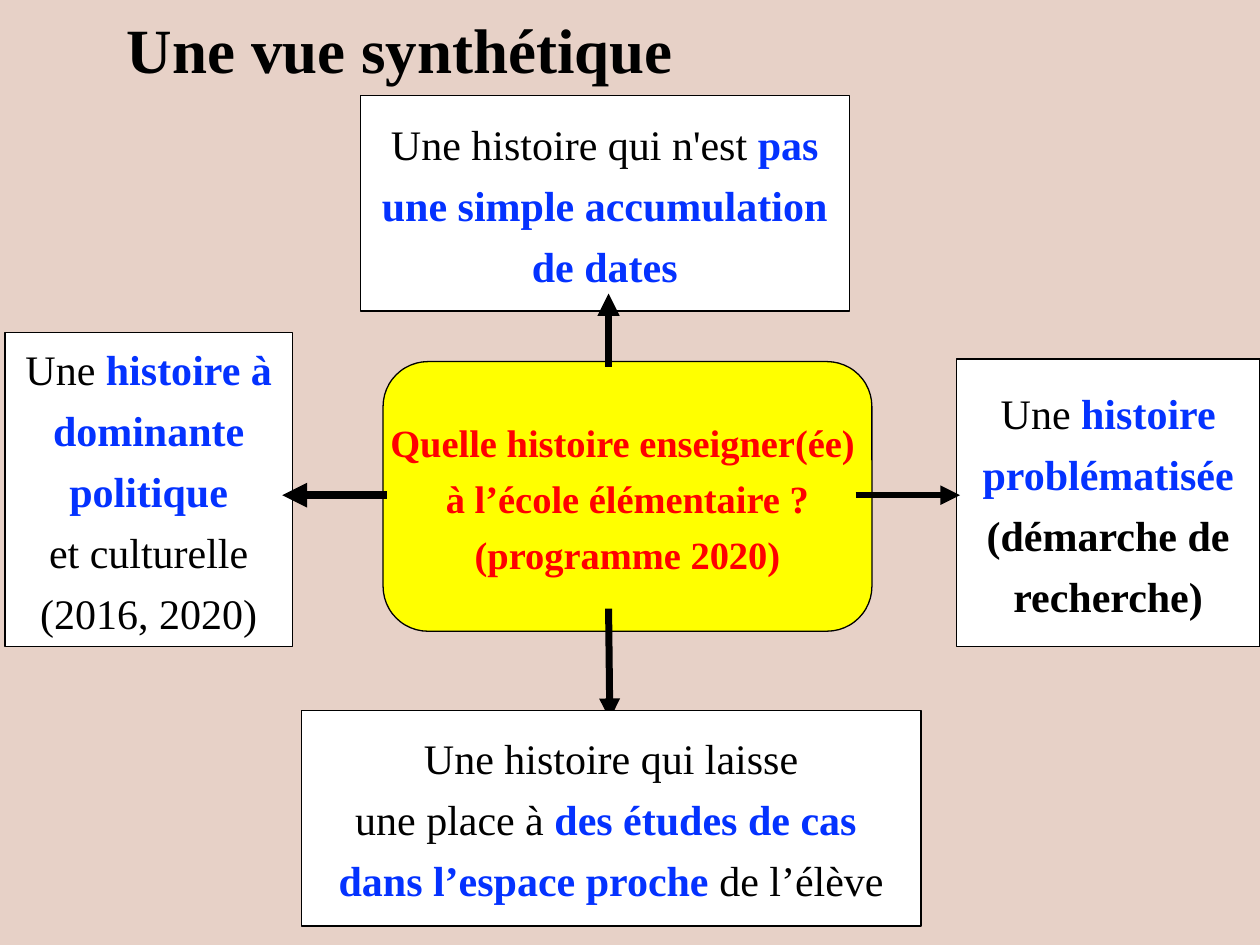
from dataclasses import dataclass

from lxml import etree
from pptx import Presentation
from pptx.dml.color import RGBColor
from pptx.enum.shapes import MSO_CONNECTOR, MSO_SHAPE
from pptx.enum.text import MSO_ANCHOR, PP_ALIGN
from pptx.oxml.ns import qn
from pptx.util import Inches, Pt

STRAIGHT = MSO_CONNECTOR.STRAIGHT
RECTANGLE = MSO_SHAPE.RECTANGLE
ROUNDED = MSO_SHAPE.ROUNDED_RECTANGLE
TOP, MIDDLE = MSO_ANCHOR.TOP, MSO_ANCHOR.MIDDLE
LEFT, CENTER = PP_ALIGN.LEFT, PP_ALIGN.CENTER


@dataclass(frozen=True)
class Theme:
    font: str = "Times New Roman"
    background: str = "E7D1C7"
    ink: str = "000000"
    paper: str = "FFFFFF"
    accent: str = "0432FF"
    question_fill: str = "FFFF00"
    question_ink: str = "FF0000"
    title_size: int = 36
    answer_size: int = 24
    question_size: int = 22
    outline: float = 0.75
    paragraph_gap: float = 0.25


THEME = Theme()


def rgb(value):
    return RGBColor.from_string(value)


def plain(text):
    return text, THEME.ink, False


def strong(text):
    return text, THEME.accent, True


def strong_black(text):
    return text, THEME.ink, True


def question(text):
    return text, THEME.question_ink, True


def write_text(frame, lines, *, size, align=CENTER, anchor=MIDDLE,
               wrap=False, line_spacing=None):
    frame.word_wrap = wrap
    frame.vertical_anchor = anchor
    for index, runs in enumerate(lines):
        paragraph = frame.paragraphs[0] if index == 0 else frame.add_paragraph()
        paragraph.alignment = align
        if line_spacing:
            paragraph.line_spacing = line_spacing
        if index:
            paragraph.space_before = Pt(size * THEME.paragraph_gap)
        for text, color, bold in runs:
            run = paragraph.add_run()
            run.text = text
            run.font.name = THEME.font
            run.font.size = Pt(size)
            run.font.bold = bold
            run.font.color.rgb = rgb(color)


class SlideBuilder:
    def __init__(self, slide, theme):
        self.slide = slide
        self.theme = theme
        fill = slide.background.fill
        fill.solid()
        fill.fore_color.rgb = rgb(theme.background)

    def title(self, text, left, top, width, height):
        box = self.slide.shapes.add_textbox(
            *map(Inches, (left, top, width, height)))
        write_text(box.text_frame, [[strong_black(text)]],
                   size=self.theme.title_size, align=LEFT, anchor=TOP,
                   wrap=True, line_spacing=0.9)

    def box(self, lines, left, top, width, height, *, kind=RECTANGLE,
            fill=THEME.paper, size=THEME.answer_size, inset_top=0.06):
        box = self.slide.shapes.add_shape(
            kind, *map(Inches, (left, top, width, height)))
        box.shadow.inherit = False
        box.fill.solid()
        box.fill.fore_color.rgb = rgb(fill)
        box.line.color.rgb = rgb(self.theme.ink)
        box.line.width = Pt(self.theme.outline)
        frame = box.text_frame
        frame.margin_left = frame.margin_right = Inches(0.09)
        frame.margin_top = Inches(inset_top)
        frame.margin_bottom = Inches(0.04)
        write_text(frame, lines, size=size)

    def arrow(self, start, end, weight):
        arrow = self.slide.shapes.add_connector(
            STRAIGHT, *map(Inches, start + end))
        arrow.line.color.rgb = rgb(self.theme.ink)
        arrow.line.width = Pt(weight)
        properties = arrow.element.spPr
        etree.SubElement(properties.find(qn("a:ln")), qn("a:tailEnd"),
                         type="triangle")
        etree.SubElement(properties, qn("a:effectLst"))


def main():
    deck = Presentation()
    deck.slide_width, deck.slide_height = Inches(10), Inches(7.5)
    page = SlideBuilder(deck.slides.add_slide(deck.slide_layouts[6]), THEME)

    page.box([[question("Quelle histoire enseigner(ée) ")],
              [question("à l’école élémentaire ?")],
              [question("(programme 2020)")]],
             3.04, 2.87, 3.88, 2.14, kind=ROUNDED, fill=THEME.question_fill,
             size=THEME.question_size, inset_top=0.07)
    page.box([[plain("Une histoire qui n'est "), strong("pas")],
              [strong("une simple accumulation")],
              [strong("de dates")]],
             2.86, 0.76, 3.88, 1.71)
    page.box([[plain("Une "), strong("histoire")],
              [strong("problématisée")],
              [strong_black("(démarche de")],
              [strong_black("recherche)")]],
             7.59, 2.85, 2.41, 2.28)
    page.box([[plain("Une "), strong("histoire à")],
              [strong("dominante")],
              [strong("politique")],
              [plain("et culturelle")],
              [plain("(2016, 2020)")]],
             0.04, 2.64, 2.28, 2.49)

    for start, end, weight in (
        ((4.83, 4.83), (4.84, 5.71), 4),
        ((3.07, 3.93), (2.24, 3.93), 4.75),
        ((4.83, 2.91), (4.83, 2.33), 4.25),
        ((6.79, 3.93), (7.62, 3.93), 3.75),
    ):
        page.arrow(start, end, weight)

    page.title("Une vue synthétique", 0.91, 0.1, 8.5, 0.66)
    page.box([[plain("Une histoire qui laisse")],
              [plain("une place à "), strong("des études de cas ")],
              [strong("dans l’espace proche "), plain("de l’élève")]],
             2.39, 5.64, 4.92, 1.71, inset_top=0.04)

    deck.save("out.pptx")


if __name__ == "__main__":
    main()
